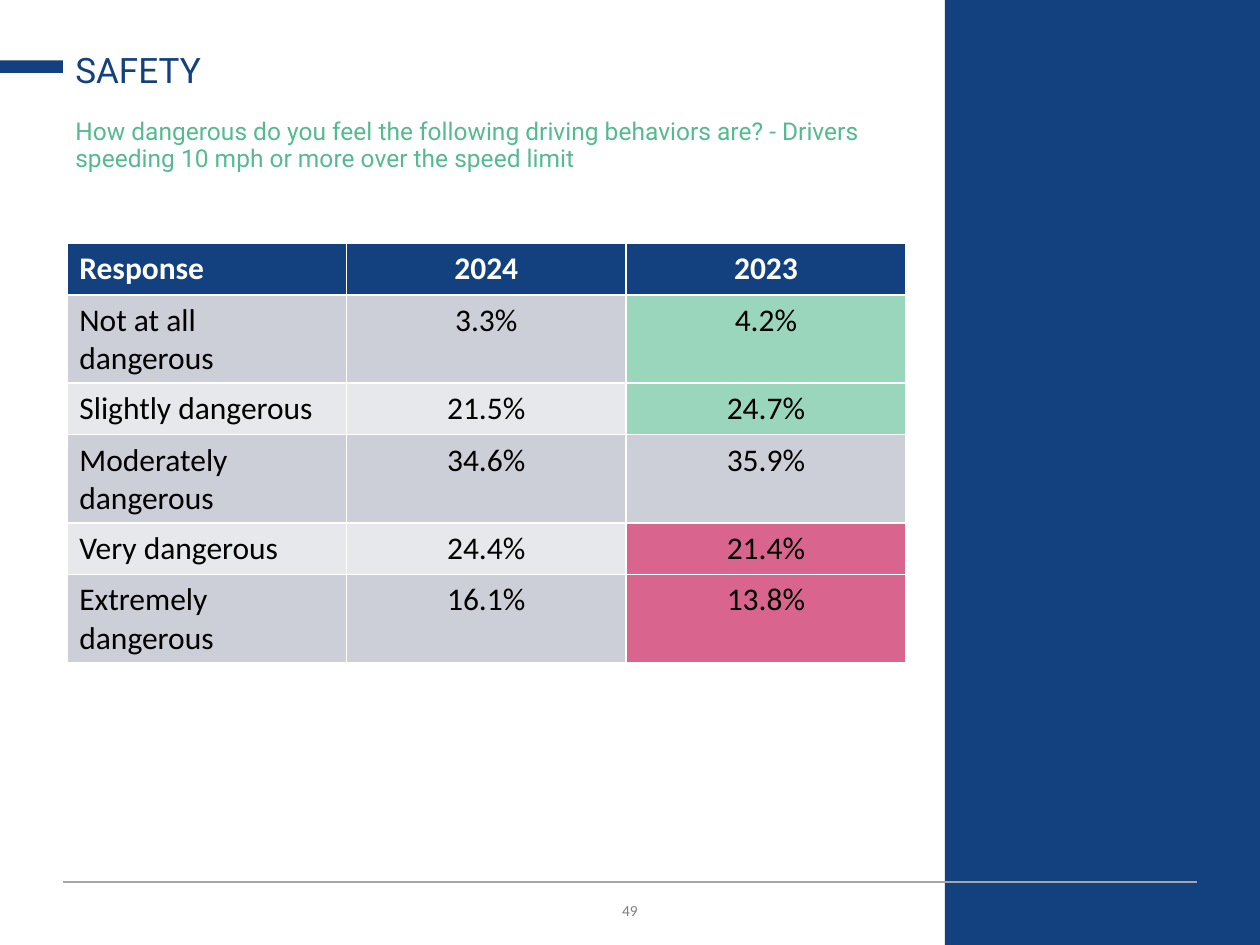
from pptx import Presentation
from pptx.dml.color import RGBColor
from pptx.enum.shapes import MSO_CONNECTOR, MSO_SHAPE
from pptx.enum.text import MSO_ANCHOR, PP_ALIGN
from pptx.oxml.ns import qn
from pptx.util import Pt
from lxml import etree

PX = 9144  # 100 px to the inch
LEFT, CENTER = PP_ALIGN.LEFT, PP_ALIGN.CENTER
TOP, MIDDLE, BOTTOM = MSO_ANCHOR.TOP, MSO_ANCHOR.MIDDLE, MSO_ANCHOR.BOTTOM
RECTANGLE, STRAIGHT = MSO_SHAPE.RECTANGLE, MSO_CONNECTOR.STRAIGHT

COLORS = {
    "navy": "13407E", "green": "55BA8F", "white": "FFFFFF", "black": "000000",
    "gray": "808080", "rule": "A6A6A6", "dark band": "CCCFD8",
    "light band": "E7E8EC", "higher": "99D6BC", "lower": "D9648D",
}

HEADER = ("Response", "2024", "2023")
# Response, 2024, 2023, highlight of the 2023 cell
RESPONSES = [
    ("Not at all dangerous", "3.3%", "4.2%", "higher"),
    ("Slightly dangerous", "21.5%", "24.7%", "higher"),
    ("Moderately dangerous", "34.6%", "35.9%", None),
    ("Very dangerous", "24.4%", "21.4%", "lower"),
    ("Extremely dangerous", "16.1%", "13.8%", "lower"),
]


def color(name):
    return RGBColor.from_string(COLORS[name])


def px(*lengths):
    return [length * PX for length in lengths]


def write(frame, text, *, size, ink, font="Calibri", bold=False, align=LEFT,
          spacing=None, small_caps=False):
    para = frame.paragraphs[0]
    para.alignment = align
    if spacing:
        para.line_spacing = spacing
    span = para.add_run()
    span.text = text
    span.font.name = font
    span.font.size = Pt(size)
    span.font.bold = bold
    span.font.color.rgb = color(ink)
    if small_caps:
        span.font._element.set("cap", "small")


def add_text(page, place, text, anchor=TOP, **text_format):
    frame = page.shapes.add_textbox(*px(*place)).text_frame
    frame.word_wrap = True
    frame.vertical_anchor = anchor
    write(frame, text, **text_format)


def add_block(page, place, fill):
    block = page.shapes.add_shape(RECTANGLE, *px(*place))
    block.shadow.inherit = False
    block.fill.solid()
    block.fill.fore_color.rgb = color(fill)
    block.line.fill.background()


def add_rule(page, ends, ink, width):
    rule = page.shapes.add_connector(STRAIGHT, *px(*ends))
    rule.line.color.rgb = color(ink)
    rule.line.width = Pt(width)
    etree.SubElement(rule._element.spPr, qn("a:effectLst"))


def fill_row(table, row, values, fills, ink, bold=False):
    for column, (value, fill) in enumerate(zip(values, fills)):
        cell = table.cell(row, column)
        cell.fill.solid()
        cell.fill.fore_color.rgb = color(fill)
        write(cell.text_frame, value, size=18, ink=ink, bold=bold,
              align=CENTER if column else LEFT)


def add_response_table(page, left, top, column_width, row_height):
    rows, columns = len(RESPONSES) + 1, len(HEADER)
    place = px(left, top, column_width * columns, row_height * rows)
    # The default table style supplies the white cell borders
    table = page.shapes.add_table(rows, columns, *place).table
    fill_row(table, 0, HEADER, ["navy"] * columns, "white", bold=True)
    for row, (*values, highlight) in enumerate(RESPONSES, start=1):
        band = "dark band" if row % 2 else "light band"
        fill_row(table, row, values, [band, band, highlight or band], "black")


def main():
    deck = Presentation()
    deck.slide_width, deck.slide_height = px(1000, 750)
    page = deck.slides.add_slide(deck.slide_layouts[6])

    # Page frame: number, side panel, footer rule, title marker
    add_text(page, (50, 706, 900, 30), "49", MIDDLE, size=11, ink="gray",
             align=CENTER, small_caps=True)
    add_block(page, (750, 0, 250, 750), "navy")
    add_rule(page, (50, 700, 950, 700), "rule", 0.75)
    add_block(page, (0, 48, 50, 10), "navy")

    # Question and title
    add_text(page, (50, 90, 670, 67),
             "How dangerous do you feel the following driving behaviors are? - "
             "Drivers speeding 10 mph or more over the speed limit",
             size=14, ink="green", font="Roboto", spacing=0.9)
    add_text(page, (50, 29, 670, 48), "SAFETY", BOTTOM,
             size=20, ink="navy", font="Roboto", spacing=0.9)

    # Survey results
    add_response_table(page, 53, 193, column_width=222, row_height=41)

    deck.save("out.pptx")


if __name__ == "__main__":
    main()
